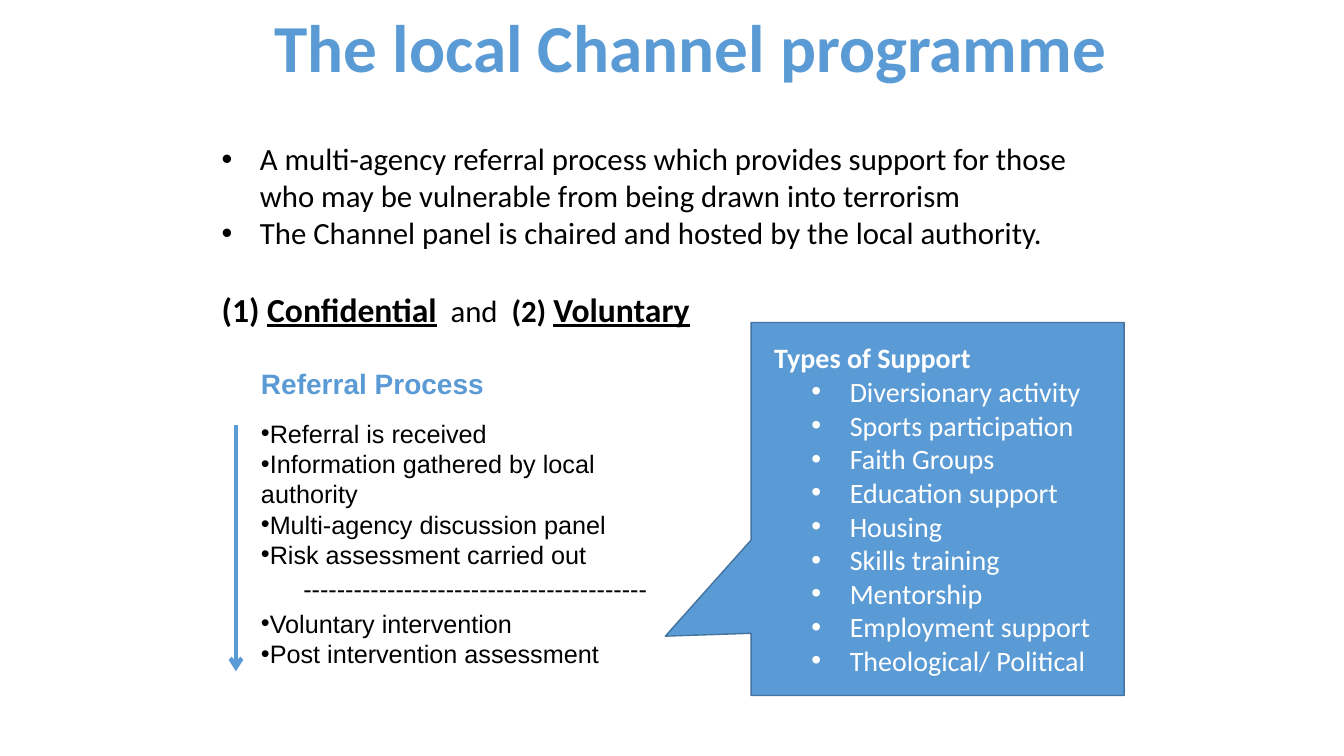
from pptx import Presentation
from pptx.dml.color import RGBColor
from pptx.enum.shapes import MSO_CONNECTOR, MSO_SHAPE
from pptx.enum.text import MSO_ANCHOR, PP_ALIGN
from pptx.oxml.ns import qn
from pptx.util import Inches, Pt
from lxml.etree import SubElement

BLUE, DARK_BLUE, BLACK, WHITE = "5B9BD5", "43739E", "000000", "FFFFFF"


def color(hex_string):
    return RGBColor.from_string(hex_string)


def write(frame, runs, font, ink, bullet=False, margin=0, indent=0,
          before=0, after=0, align=PP_ALIGN.LEFT):
    """Add a paragraph; each run is (text, size, bold, underline)."""
    first = frame.paragraphs[0]
    paragraph = frame.add_paragraph() if first.runs else first
    paragraph.alignment = align
    paragraph.space_before, paragraph.space_after = Pt(before), Pt(after)
    properties = paragraph._p.get_or_add_pPr()
    properties.set("marL", str(Inches(margin)))
    properties.set("indent", str(Inches(indent)))
    if bullet:
        SubElement(properties, qn("a:buFont")).set("typeface", "Arial")
        SubElement(properties, qn("a:buChar")).set("char", "•")
    else:
        SubElement(properties, qn("a:buNone"))
    for text, size, bold, underline in runs:
        run = paragraph.add_run()
        run.text = text
        run.font.name, run.font.size = font, Pt(size)
        run.font.bold, run.font.underline = bold, underline
        run.font.color.rgb = color(ink)


deck = Presentation()
deck.slide_width, deck.slide_height = Inches(13.33), Inches(7.5)
slide = deck.slides.add_slide(deck.slide_layouts[6])
shapes = slide.shapes

# Title
title = shapes.add_textbox(Inches(2.35), Inches(0.15), Inches(9), Inches(0.61)).text_frame
title.word_wrap = True
title.vertical_anchor = MSO_ANCHOR.MIDDLE
write(title, [("The local Channel programme", 48, True, False)], "Calibri", BLUE,
      align=PP_ALIGN.CENTER)

# Introduction and the two principles
introduction = shapes.add_textbox(Inches(2.1), Inches(1.34), Inches(8.64), Inches(1.98)).text_frame
introduction.word_wrap = True
for statement in (
    "A multi-agency referral process which provides support for those "
    "who may be vulnerable from being drawn into terrorism",
    "The Channel panel is chaired and hosted by the local authority.",
):
    write(introduction, [(statement, 22, False, False)], "Calibri", BLACK,
          bullet=True, margin=0.38, indent=-0.38)
principles = [
    ("(1) ", 24, True, False),
    ("Confidential", 24, True, True),
    ("  and  ", 22, False, False),
    ("(2) ", 22, True, False),
    ("Voluntary", 24, True, True),
]
write(introduction, principles, "Calibri", BLACK, before=26.8)

# Referral process
referral = shapes.add_textbox(Inches(2.49), Inches(3.59), Inches(4.25), Inches(3.52)).text_frame
referral.word_wrap = True
write(referral, [("Referral Process", 20, True, False)], "Arial", BLUE, after=12.6)
for step in ("Referral is received", "Information gathered by local authority",
             "Multi-agency discussion panel", "Risk assessment carried out"):
    write(referral, [(step, 18, False, False)], "Arial", BLACK, bullet=True)
write(referral, [("-" * 41, 18, False, False)], "Arial", BLACK,
      margin=0.42, before=3, after=3)
for step in ("Voluntary intervention", "Post intervention assessment"):
    write(referral, [(step, 18, False, False)], "Arial", BLACK, bullet=True)

# Types of support callout
support_callout = shapes.add_shape(MSO_SHAPE.RECTANGULAR_CALLOUT,
                                   Inches(7.45), Inches(3.2), Inches(3.7), Inches(3.7))
support_callout.shadow.inherit = False
support_callout.adjustments[0] = -0.73
support_callout.adjustments[1] = 0.341
support_callout.fill.solid()
support_callout.fill.fore_color.rgb = color(BLUE)
support_callout.line.color.rgb = color(DARK_BLUE)
support_callout.line.width = Pt(1)
support = support_callout.text_frame
support.word_wrap = True
support.vertical_anchor = MSO_ANCHOR.MIDDLE
write(support, [("Types of Support", 20, True, False)], "Calibri", WHITE, margin=0.13)
for kind in ("Diversionary activity", "Sports participation", "Faith Groups",
             "Education support", "Housing", "Skills training", "Mentorship",
             "Employment support", "Theological/ Political"):
    write(support, [(kind, 20, False, False)], "Calibri", WHITE,
          bullet=True, margin=0.88, indent=-0.38)

# Arrow down the referral steps
process_arrow = shapes.add_connector(MSO_CONNECTOR.STRAIGHT, Inches(2.34), Inches(4.22),
                                     Inches(2.34), Inches(6.66))
process_arrow.line.color.rgb = color(BLUE)
process_arrow.line.width = Pt(3)
SubElement(process_arrow.line._get_or_add_ln(), qn("a:tailEnd")).set("type", "arrow")
SubElement(process_arrow._element.spPr, qn("a:effectLst"))

deck.save("out.pptx")
